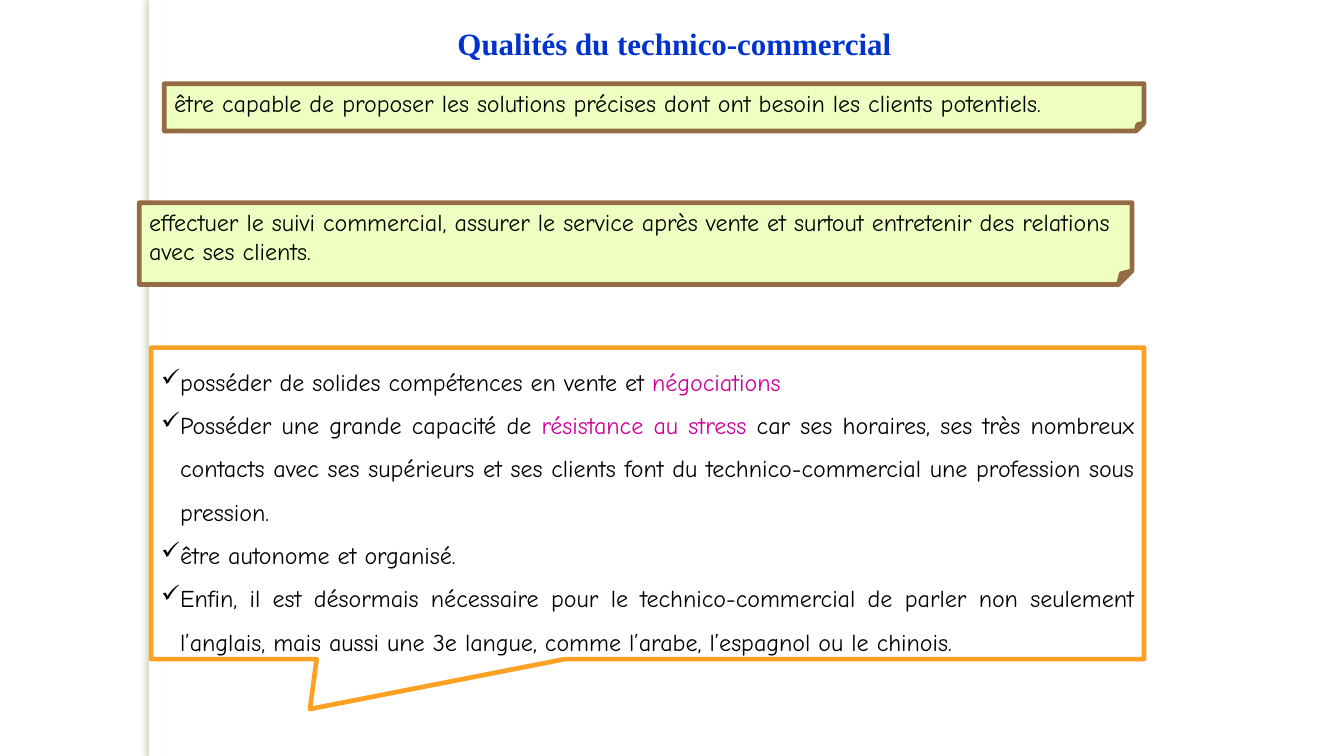
from dataclasses import dataclass

from lxml import etree
from pptx import Presentation
from pptx.dml.color import RGBColor
from pptx.enum.shapes import MSO_SHAPE
from pptx.enum.text import MSO_ANCHOR, MSO_AUTO_SIZE, PP_ALIGN
from pptx.oxml.ns import qn
from pptx.util import Cm, Pt

RECTANGLE = MSO_SHAPE.RECTANGLE
FOLDED_NOTE = MSO_SHAPE.FOLDED_CORNER
CALLOUT = MSO_SHAPE.RECTANGULAR_CALLOUT
TOP = MSO_ANCHOR.TOP
GROW = MSO_AUTO_SIZE.SHAPE_TO_FIT_TEXT
LEFT = PP_ALIGN.LEFT
JUSTIFY = PP_ALIGN.JUSTIFY


@dataclass(frozen=True)
class Theme:
    title: str = "0033CC"
    body: str = "000000"
    accent: str = "CC0099"
    paper: str = "FFFFFF"
    note_fill: str = "EFFFC1"
    note_line: str = "956B43"
    callout_line: str = "FEA022"
    band_shadow: str = "657B39"
    title_font: str = "Times New Roman"
    body_font: str = "Comic Neue"
    title_size: float = 22.1
    body_size: float = 17.2
    border: float = 3.35


THEME = Theme()
TITLE_STYLE = {"name": THEME.title_font, "size": Pt(THEME.title_size), "bold": True}
BODY_STYLE = {"name": THEME.body_font, "size": Pt(THEME.body_size)}

TITLE = "Qualités du technico-commercial"

# Text with its left, top, width and height in centimetres
NOTES = [
    ("effectuer le suivi commercial, assurer le service après vente et surtout "
     "entretenir des relations avec ses clients.", (3.51, 5.11, 25.02, 2.06)),
    ("être capable de proposer les solutions précises dont ont besoin les clients "
     "potentiels.", (4.14, 2.11, 24.69, 1.19)),
]

# Each quality is a list of (text, colour) parts
QUALITIES = [
    [("posséder de solides compétences en vente et ", THEME.body),
     ("négociations", THEME.accent)],
    [("Posséder une grande capacité de ", THEME.body),
     ("résistance au stress ", THEME.accent),
     ("car ses horaires, ses très nombreux contacts avec ses supérieurs et ses clients "
      "font du technico-commercial une profession sous pression.", THEME.body)],
    [("être autonome et organisé.", THEME.body)],
    [("Enfin, il est désormais nécessaire pour le technico-commercial de parler non "
      "seulement l’anglais, mais aussi une 3e langue, comme l’arabe, l’espagnol ou le "
      "chinois.", THEME.body)],
]


def set_attributes(target, values):
    for name, value in values.items():
        setattr(target, name, value)


def add_panel(slide, preset, box, fill, line=None):
    panel = slide.shapes.add_shape(preset, *(Cm(length) for length in box))
    panel.shadow.inherit = False
    panel.fill.solid()
    panel.fill.fore_color.rgb = RGBColor.from_string(fill)
    if line:
        panel.line.color.rgb = RGBColor.from_string(line)
        panel.line.width = Pt(THEME.border)
    else:
        panel.line.fill.background()
    return panel


def prepare_frame(shape):
    frame = shape.text_frame
    set_attributes(frame, {"word_wrap": True, "vertical_anchor": TOP, "auto_size": GROW})
    return frame


def write_parts(paragraph, parts, style, layout):
    set_attributes(paragraph, layout)
    for text, color in parts:
        run = paragraph.add_run()
        run.text = text
        set_attributes(run.font, style)
        run.font.color.rgb = RGBColor.from_string(color)


def add_check_bullet(paragraph):
    properties = paragraph._p.get_or_add_pPr()
    properties.set("marL", str(Cm(0.48)))
    properties.set("indent", str(-Cm(0.48)))
    etree.SubElement(properties, qn("a:buChar"), char="✓")


def add_band(slide, height):
    band = add_panel(slide, RECTANGLE, (3.76, 0, 0.28, height), THEME.paper)
    effects = band._element.spPr.find(qn("a:effectLst"))
    shadow = etree.SubElement(effects, qn("a:outerShdw"), blurRad=str(Pt(3)),
                              dist=str(Pt(3)), dir="10800000", rotWithShape="0")
    color = etree.SubElement(shadow, qn("a:srgbClr"), val=THEME.band_shadow)
    etree.SubElement(color, qn("a:alpha"), val="25000")


def add_note(slide, text, box):
    note = add_panel(slide, FOLDED_NOTE, box, THEME.note_fill, THEME.note_line)
    paragraph = prepare_frame(note).paragraphs[0]
    write_parts(paragraph, [(text, THEME.body)], BODY_STYLE, {"alignment": LEFT})


def add_qualities(slide):
    callout = add_panel(slide, CALLOUT, (3.81, 8.76, 25.02, 7.85),
                        THEME.paper, THEME.callout_line)
    callout.adjustments[0] = -0.34
    callout.adjustments[1] = 0.66
    frame = prepare_frame(callout)
    for index, parts in enumerate(QUALITIES):
        paragraph = frame.add_paragraph() if index else frame.paragraphs[0]
        add_check_bullet(paragraph)
        write_parts(paragraph, parts, BODY_STYLE,
                    {"alignment": JUSTIFY, "line_spacing": 1.5})


def add_title(slide):
    title = slide.shapes.add_textbox(Cm(11.28), Cm(0.03), Cm(15.62), Cm(1.52))
    paragraph = prepare_frame(title).paragraphs[0]
    write_parts(paragraph, [(TITLE, THEME.title)], TITLE_STYLE,
                {"alignment": JUSTIFY, "line_spacing": 1.5, "space_after": Pt(4.9)})


def main():
    deck = Presentation()
    set_attributes(deck, {"slide_width": Cm(33.87), "slide_height": Cm(19.05)})
    slide = deck.slides.add_slide(deck.slide_layouts[6])

    # Shaded band along the left margin
    add_band(slide, 19.05)

    # Folded notes
    for text, box in NOTES:
        add_note(slide, text, box)

    # Callout with the list of qualities, then the heading
    add_qualities(slide)
    add_title(slide)

    deck.save("out.pptx")


if __name__ == "__main__":
    main()
